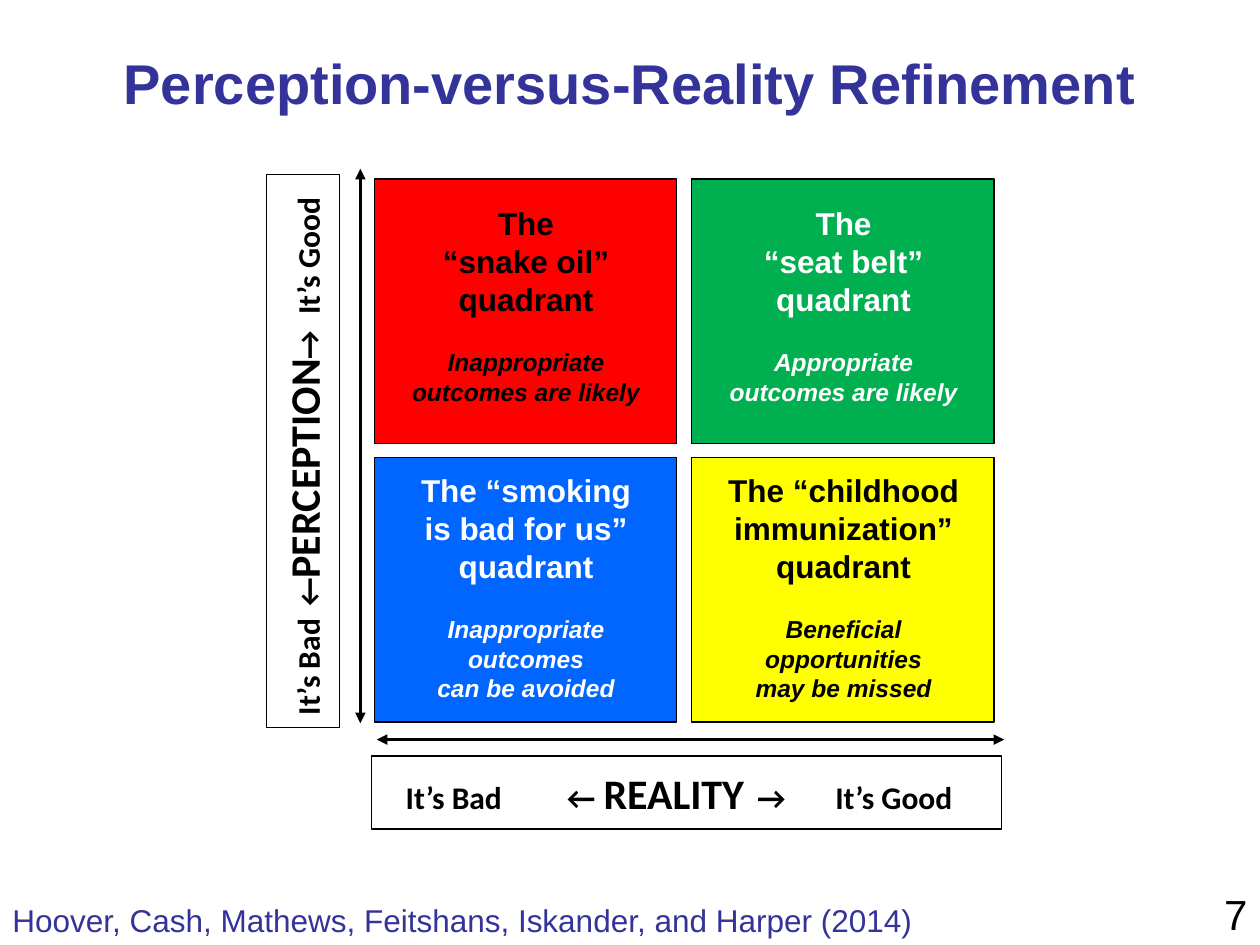
from lxml import etree
from pptx import Presentation
from pptx.dml.color import RGBColor
from pptx.enum.shapes import MSO_CONNECTOR as LINK, MSO_SHAPE as SHAPE
from pptx.enum.text import MSO_ANCHOR as ANCHOR, PP_ALIGN as ALIGN
from pptx.oxml.ns import qn
from pptx.util import Inches, Pt

HUES = {"black": "000000", "white": "FFFFFF", "navy": "333399", "red": "FF0000",
        "green": "00B050", "blue": "0066FF", "yellow": "FFFF00"}

TITLE = "Perception-versus-Reality Refinement"
CREDIT = "Hoover, Cash, Mathews, Feitshans, Iskander, and Harper (2014)"
PAGE = "7"

# column, row, fill, ink, name, outcome
QUADS = [
    (0, 0, "red", "black", "The\n“snake oil”\nquadrant",
     "Inappropriate outcomes are likely"),
    (1, 0, "green", "white", "The\n“seat belt”\nquadrant",
     "Appropriate outcomes are likely"),
    (0, 1, "blue", "white", "The “smoking\nis bad for us”\nquadrant",
     "Inappropriate outcomes\ncan be avoided"),
    (1, 1, "yellow", "black", "The “childhood\nimmunization”\nquadrant",
     "Beneficial opportunities\nmay be missed"),
]
COLS, ROWS, TEXT_TOPS = (2.97, 5.49), (1.42, 3.63), (1.57, 3.69)
WIDE, HIGH = 2.4, 2.1

# box, turn, left inset, tab stops, (text, size) runs
AXES = [
    ((2.95, 6, 5, 0.58), 0, 0.27, (1.28, 1.57, 2.79, 3.41),
     [("It’s Bad\t←\t", 18), ("REALITY", 24), ("\t→\tIt’s Good", 18)]),
    ((0.21, 3.29, 4.39, 0.58), 270, 0.1, (0.86, 3.18),
     [("It’s Bad\t←", 18), ("PERCEPTION", 24), ("→\tIt’s Good", 18)]),
]
ARROWS = [(2.86, 1.34, 2.86, 5.74), (2.99, 5.87, 7.97, 5.87)]


def paint(hue):
    return RGBColor.from_string(HUES[hue])


def style(font, size, hue, bold=False, name="Arial"):
    font.name, font.size, font.bold = name, Pt(size), bold
    font.color.rgb = paint(hue)


def add_rect(slide, box, hue):
    rect = slide.shapes.add_shape(SHAPE.RECTANGLE, *map(Inches, box))
    rect.shadow.inherit = False
    rect.fill.solid()
    rect.fill.fore_color.rgb = paint(hue)
    rect.line.color.rgb = paint("black")
    rect.line.width = Pt(0.75)
    return rect


def add_text(slide, box, wrap=True):
    frame = slide.shapes.add_textbox(*map(Inches, box)).text_frame
    frame.word_wrap = wrap
    return frame


def add_quad(slide, col, row, hue, ink, name, outcome):
    add_rect(slide, (COLS[col], ROWS[row], WIDE, HIGH), hue)
    frame = add_text(slide, (COLS[col] + 0.08, TEXT_TOPS[row], 2.25, 1.72))
    head, note = frame.paragraphs[0], frame.add_paragraph()
    for para, text, size in ((head, name, 18), (note, outcome, 14)):
        para.text = text
        para.alignment = ALIGN.CENTER
        para.line_spacing = Pt(1.2 * size)
        style(para.font, size, ink, True)
    note.font.italic = True
    note.space_before = Pt(17)


def add_axis(slide, box, turn, inset, stops, runs):
    rect = add_rect(slide, box, "white")
    rect.rotation = turn
    frame = rect.text_frame
    frame.margin_left = Inches(inset)
    frame.vertical_anchor = ANCHOR.MIDDLE
    para = frame.paragraphs[0]
    para.alignment = ALIGN.LEFT
    tabs = etree.SubElement(para._p.get_or_add_pPr(), qn("a:tabLst"))
    for stop in stops:
        etree.SubElement(tabs, qn("a:tab"), pos=str(Inches(stop)), algn="l")
    for text, size in runs:
        run = para.add_run()
        run.text = text
        style(run.font, size, "black", True, "Calibri")


def add_arrow(slide, ends):
    link = slide.shapes.add_connector(LINK.STRAIGHT, *map(Inches, ends))
    link.line.color.rgb = paint("black")
    link.line.width = Pt(2)
    line = link.line._get_or_add_ln()
    for end in ("a:headEnd", "a:tailEnd"):
        etree.SubElement(line, qn(end), type="triangle")
    etree.SubElement(link._element.spPr, qn("a:effectLst"))


def main():
    deck = Presentation()
    deck.slide_width, deck.slide_height = Inches(10), Inches(7.5)
    slide = deck.slides.add_slide(deck.slide_layouts[5])

    title = slide.shapes.title
    title.left, title.top, title.width, title.height = map(
        Inches, (0, 0.33, 10, 0.64))
    title.text = TITLE
    style(title.text_frame.paragraphs[0].font, 32, "navy", True)

    for quad in QUADS:
        add_quad(slide, *quad)
    for axis in AXES:
        add_axis(slide, *axis)
    for ends in ARROWS:
        add_arrow(slide, ends)

    page = add_text(slide, (7.67, 7, 2.33, 0.5)).paragraphs[0]
    page.text = PAGE
    page.alignment = ALIGN.RIGHT
    style(page.font, 24, "black")
    credit = add_text(slide, (0, 7.1, 7.68, 0.4), False).paragraphs[0]
    credit.text = CREDIT
    style(credit.font, 18, "navy")

    deck.save("out.pptx")


if __name__ == "__main__":
    main()
